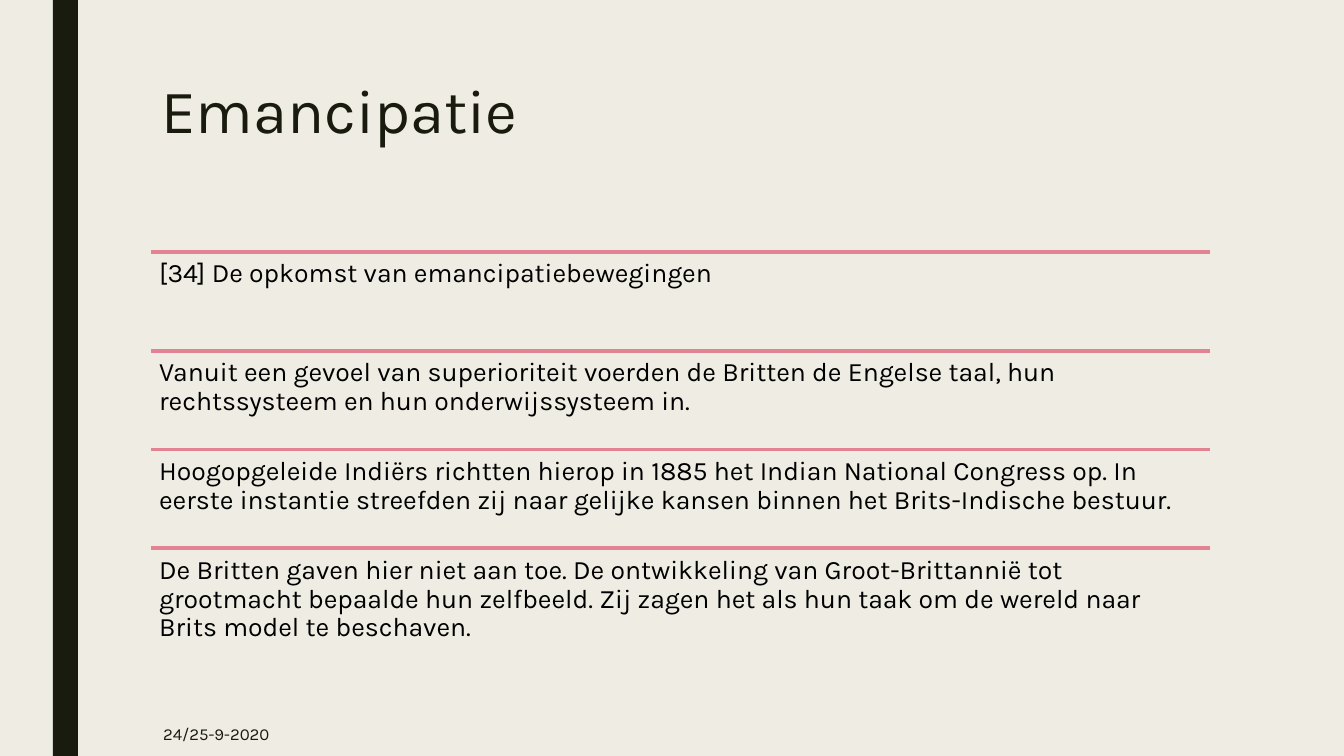
"""Build the Emancipatie slide with a ruled list of statements."""
from dataclasses import dataclass

from lxml.etree import SubElement
from pptx import Presentation
from pptx.dml.color import RGBColor
from pptx.enum.shapes import MSO_CONNECTOR as Link, MSO_SHAPE as Form
from pptx.enum.text import MSO_ANCHOR as Anchor, MSO_AUTO_SIZE as Fit, PP_ALIGN as Align
from pptx.oxml.ns import qn
from pptx.util import Pt

DARK, BLACK, ROSE, CREAM = "191B0E", "000000", "E28394", "EFEDE3"
LEFT, WIDTH = 108, 756
TOP, STEP = 180, 70.56

ITEMS = (
    "[34] De opkomst van emancipatiebewegingen",
    "Vanuit een gevoel van superioriteit voerden de Britten de Engelse taal, "
    "hun rechtssysteem en hun onderwijssysteem in.",
    "Hoogopgeleide Indiërs richtten hierop in 1885 het Indian National Congress op. "
    "In eerste instantie streefden zij naar gelijke kansen binnen het Brits-Indische bestuur.",
    "De Britten gaven hier niet aan toe. De ontwikkeling van Groot-Brittannië tot "
    "grootmacht bepaalde hun zelfbeeld. Zij zagen het als hun taak om de wereld naar "
    "Brits model te beschaven.",
)


@dataclass
class Label:
    text: str
    left: float
    top: float
    width: float
    height: float
    size: float
    color: str = BLACK
    space: float = 0.9
    inset: tuple[float, float] = (7.2, 3.6)
    anchor: Anchor = Anchor.TOP


def paint(color: str) -> RGBColor:
    return RGBColor.from_string(color)


def write(shape, label: Label) -> None:
    shape.left, shape.top = Pt(label.left), Pt(label.top)
    shape.width, shape.height = Pt(label.width), Pt(label.height)
    frame = shape.text_frame
    frame.text = label.text
    frame.word_wrap = True
    frame.auto_size = Fit.NONE
    frame.vertical_anchor = label.anchor
    side, edge = label.inset
    frame.margin_left = frame.margin_right = Pt(side)
    frame.margin_top = frame.margin_bottom = Pt(edge)
    para = frame.paragraphs[0]
    para.alignment = Align.LEFT
    para.line_spacing = label.space
    para.font.name = "Karla"
    para.font.size = Pt(label.size)
    para.font.color.rgb = paint(label.color)


def add_label(slide, label: Label) -> None:
    write(slide.shapes.add_textbox(0, 0, 0, 0), label)


def add_rule(slide, top: float) -> None:
    rule = slide.shapes.add_connector(
        Link.STRAIGHT, Pt(LEFT), Pt(top), Pt(LEFT + WIDTH), Pt(top))
    rule.line.color.rgb = paint(ROSE)
    rule.line.width = Pt(2.75)
    SubElement(rule._element.spPr, qn("a:effectLst"))


def add_band(slide, height: int) -> None:
    band = slide.shapes.add_shape(Form.RECTANGLE, Pt(37.7), 0, Pt(18), height)
    band.shadow.inherit = False
    band.fill.solid()
    band.fill.fore_color.rgb = paint(DARK)
    band.line.fill.background()


def main() -> None:
    deck = Presentation()
    deck.slide_width, deck.slide_height = Pt(960), Pt(540)
    slide = deck.slides.add_slide(deck.slide_layouts.get_by_name("Title Only"))
    slide.background.fill.solid()
    slide.background.fill.fore_color.rgb = paint(CREAM)
    add_band(slide, deck.slide_height)
    write(slide.shapes.title, Label("Emancipatie", LEFT, 54, WIDTH, 116.64, 44, DARK, 0.89))
    for row, text in enumerate(ITEMS):
        top = TOP + row * STEP
        add_rule(slide, top)
        add_label(slide, Label(text, LEFT, top, WIDTH, STEP, 19, inset=(5.7, 5.7)))
    add_label(slide, Label("24/25-9-2020", 109.44, 508.5, 95, 31.5, 12, DARK, 1,
                           anchor=Anchor.MIDDLE))
    deck.save("out.pptx")


if __name__ == "__main__":
    main()
